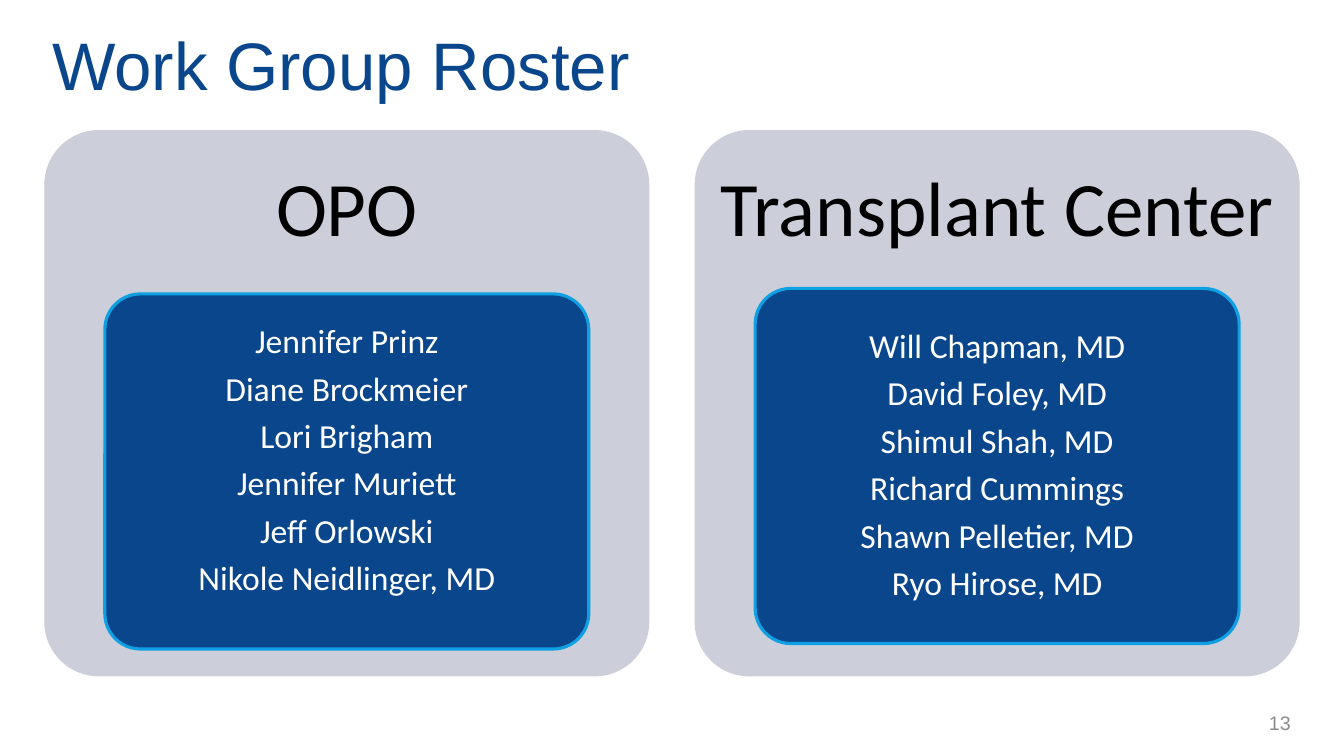
from collections import namedtuple
from dataclasses import dataclass

from pptx import Presentation
from pptx.dml.color import RGBColor
from pptx.enum.shapes import MSO_SHAPE
from pptx.enum.text import MSO_ANCHOR, PP_ALIGN
from pptx.util import Inches, Pt

Box = namedtuple("Box", "left top width height")


@dataclass(frozen=True)
class Theme:
    navy: str = "0A468C"
    sky: str = "0FA0E4"
    mist: str = "CCCFDA"
    gray: str = "8C8C8C"
    black: str = "000000"
    white: str = "FFFFFF"
    heading_font: str = "Arial"
    body_font: str = "Calibri"
    title_size: int = 48
    group_size: int = 55
    member_size: int = 24
    number_size: int = 14
    line_spacing: float = 0.9
    corner: float = 0.1


THEME = Theme()
PAGE_WIDTH, PAGE_HEIGHT = 13.33, 7.5
PANELS = Box(0.44, 1.29, 6, 5.42)
PANEL_PITCH = 6.45

GROUPS = [
    dict(
        name="OPO",
        members=["Jennifer Prinz", "Diane Brockmeier", "Lori Brigham",
                 "Jennifer Muriett", "Jeff Orlowski", "Nikole Neidlinger, MD"],
        card_top=0.3,
        bottom_inset=0.25,
    ),
    dict(
        name="Transplant Center",
        members=["Will Chapman, MD", "David Foley, MD", "Shimul Shah, MD",
                 "Richard Cummings", "Shawn Pelletier, MD", "Ryo Hirose, MD"],
        card_top=0.29,
        bottom_inset=0.05,
    ),
]


def color(value):
    return RGBColor.from_string(value)


def inside(box, left, top, width, height):
    return Box(box.left + left * box.width, box.top + top * box.height,
               width * box.width, height * box.height)


def write(shape, lines, *, size, ink, font, align=PP_ALIGN.LEFT,
          spacing=1.0, after=0, insets=(0.1, 0.05, 0.1, 0.05)):
    frame = shape.text_frame
    frame.word_wrap = True
    frame.vertical_anchor = MSO_ANCHOR.MIDDLE
    (frame.margin_left, frame.margin_top,
     frame.margin_right, frame.margin_bottom) = map(Inches, insets)
    for index, line in enumerate(lines):
        para = frame.add_paragraph() if index else frame.paragraphs[0]
        para.alignment = align
        para.line_spacing = spacing
        para.space_after = Pt(after)
        span = para.add_run()
        span.text = line
        span.font.size = Pt(size)
        span.font.name = font
        span.font.color.rgb = color(ink)


def text_area(page, box):
    return page.shapes.add_textbox(*map(Inches, box))


def rounded(page, box, fill, outline=None):
    shape = page.shapes.add_shape(MSO_SHAPE.ROUNDED_RECTANGLE, *map(Inches, box))
    shape.adjustments[0] = THEME.corner
    shape.shadow.inherit = False
    shape.fill.solid()
    shape.fill.fore_color.rgb = color(fill)
    if outline:
        shape.line.color.rgb = color(outline)
        shape.line.width = Pt(2.25)
    else:
        shape.line.fill.background()
    return shape


def group_panel(page, box, name, members, card_top, bottom_inset):
    rounded(page, box, THEME.mist)
    write(text_area(page, inside(box, 0, 0, 1, 0.3)), [name],
          size=THEME.group_size, ink=THEME.black, font=THEME.body_font,
          align=PP_ALIGN.CENTER, spacing=THEME.line_spacing, insets=(0.23,) * 4)
    card = rounded(page, inside(box, 0.1, card_top, 0.8, 0.65), THEME.navy, THEME.sky)
    write(card, members, size=THEME.member_size, ink=THEME.white,
          font=THEME.body_font, align=PP_ALIGN.CENTER,
          spacing=THEME.line_spacing, after=8,
          insets=(0.07, 0.05, 0.07, bottom_inset))


def title_bar(page, box, title):
    write(text_area(page, box), [title], size=THEME.title_size,
          ink=THEME.navy, font=THEME.heading_font)


def page_number(page, box, number):
    write(text_area(page, box), [number], size=THEME.number_size,
          ink=THEME.gray, font=THEME.heading_font, align=PP_ALIGN.RIGHT)


def roster_page(deck):
    page = deck.slides.add_slide(deck.slide_layouts[6])
    for column, group in enumerate(GROUPS):
        box = PANELS._replace(left=PANELS.left + column * PANEL_PITCH)
        group_panel(page, box, **group)
    title_bar(page, Box(0.42, 0.17, 12.74, 0.93), "Work Group Roster")
    page_number(page, Box(10.64, 6.97, 2.26, 0.4), "13")


def main():
    deck = Presentation()
    deck.slide_width = Inches(PAGE_WIDTH)
    deck.slide_height = Inches(PAGE_HEIGHT)
    roster_page(deck)
    deck.save("out.pptx")


if __name__ == "__main__":
    main()
